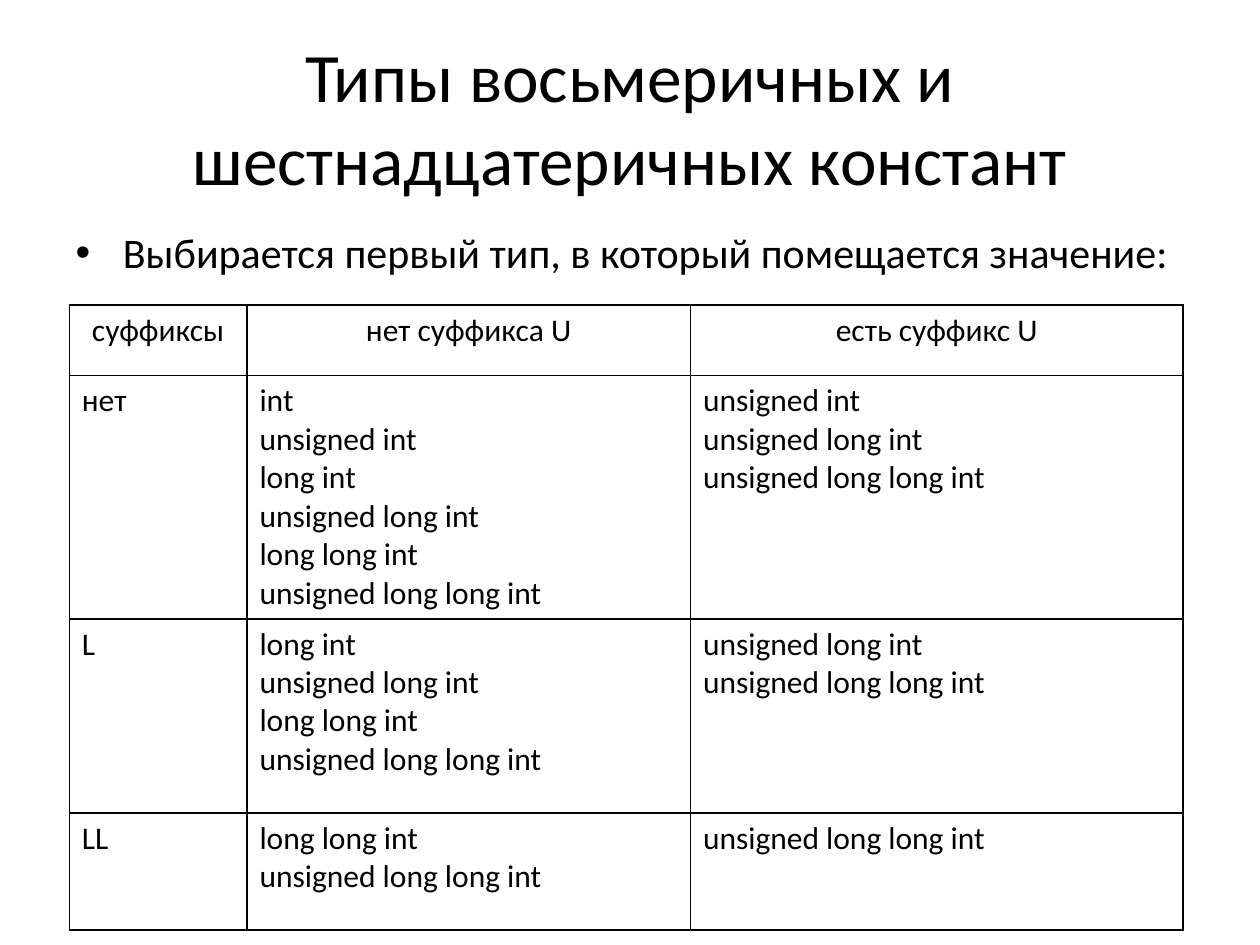
from lxml import etree
from pptx import Presentation
from pptx import util as u
from pptx.dml.color import RGBColor
from pptx.enum import text
from pptx.oxml.ns import qn

THEME = {
    "font": "Calibri",
    "ink": "000000",
    "title": 39.6,
    "body": 24,
    "table": 18,
    "border": 1,
}


def write(frame, lines, size, **paragraph_format):
    frame.text = "\n".join(lines)
    for paragraph in frame.paragraphs:
        for name, value in paragraph_format.items():
            setattr(paragraph, name, value)
        for run in paragraph.runs:
            font_format = {"name": THEME["font"], "size": u.Pt(THEME[size])}
            for name, value in font_format.items():
                setattr(run.font, name, value)
            run.font.color.rgb = RGBColor.from_string(THEME["ink"])


def draw_borders(cell):
    properties = cell._tc.get_or_add_tcPr()
    for position, side in enumerate(("lnL", "lnR", "lnT", "lnB")):
        line = etree.Element(qn(f"a:{side}"), w=str(u.Pt(THEME["border"])))
        fill = etree.SubElement(line, qn("a:solidFill"))
        etree.SubElement(fill, qn("a:srgbClr"), val=THEME["ink"])
        properties.insert(position, line)


presentation = Presentation()
presentation.slide_width = u.Inches(10)
presentation.slide_height = u.Inches(7.5)
slide = presentation.slides.add_slide(presentation.slide_layouts[1])

placeholders = [
    (slide.shapes.title, "title", 0.3, 1.25,
     "Типы восьмеричных и шестнадцатеричных констант"),
    (slide.placeholders[1], "body", 1.75, 0.59,
     "Выбирается первый тип, в который помещается значение:"),
]
for shape, size, top, height, wording in placeholders:
    box = {"left": 0.5, "top": top, "width": 9, "height": height}
    for name, value in box.items():
        setattr(shape, name, u.Inches(value))
    shape.text_frame.auto_size = text.MSO_AUTO_SIZE.NONE
    write(shape.text_frame, [wording], size)

signed_types = ["int", "long int", "long long int"]
rows = [(["суффиксы"], ["нет суффикса U"], ["есть суффикс U"])]
for rank, suffix in enumerate(["нет", "L", "LL"]):
    signed = signed_types[rank:]
    unsigned = [f"unsigned {name}" for name in signed]
    both = [name for pair in zip(signed, unsigned) for name in pair]
    rows.append(([suffix], both, unsigned))

column_widths = [1.41, 3.52, 3.91]
row_heights = [0.56, 1.9, 1.54, 0.93]
table = slide.shapes.add_table(
    len(rows), len(column_widths), u.Inches(0.55), u.Inches(2.42),
    u.Inches(sum(column_widths)), u.Inches(sum(row_heights)),
).table
table.first_row = False
table.horz_banding = False
for column, width in zip(table.columns, column_widths):
    column.width = u.Inches(width)

for row_index, (row, height) in enumerate(zip(rows, row_heights)):
    table.rows[row_index].height = u.Inches(height)
    alignment = text.PP_ALIGN.LEFT if row_index else text.PP_ALIGN.CENTER
    for column_index, lines in enumerate(row):
        cell = table.cell(row_index, column_index)
        cell.fill.background()
        write(cell.text_frame, lines, "table", alignment=alignment)
        draw_borders(cell)

presentation.save("out.pptx")
